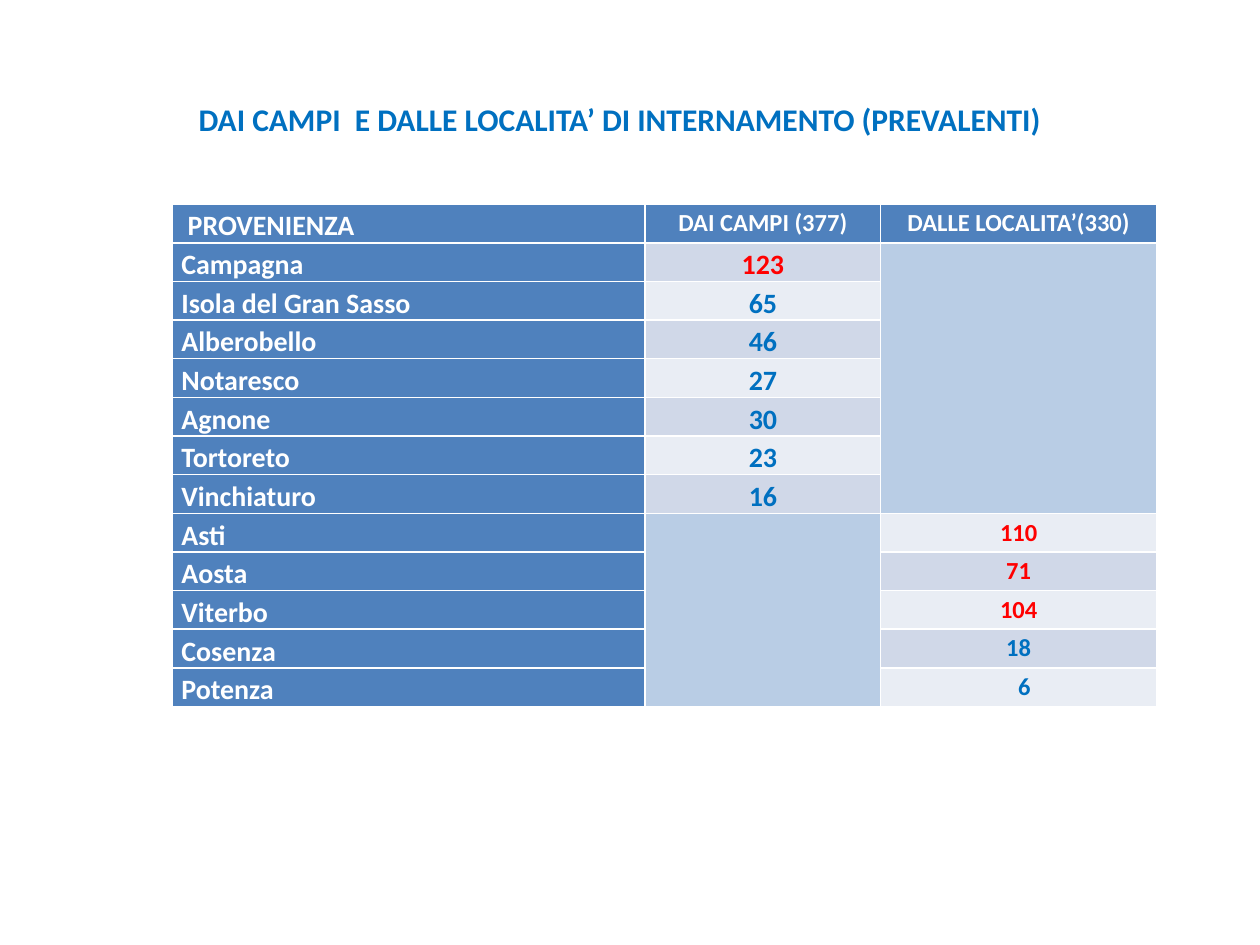
from pptx import Presentation
from pptx.dml.color import RGBColor
from pptx.enum.text import MSO_ANCHOR, MSO_AUTO_SIZE, PP_ALIGN
from pptx.util import Inches, Pt

WHITE = RGBColor(0xFF, 0xFF, 0xFF)
RED = RGBColor(0xFF, 0x00, 0x00)
BLUE = RGBColor(0x00, 0x70, 0xC0)
HEADER_FILL = RGBColor(0x4F, 0x81, 0xBD)
EMPTY_FILL = RGBColor(0xB9, 0xCD, 0xE5)
BAND_FILLS = (RGBColor(0xE9, 0xED, 0xF4), RGBColor(0xD0, 0xD8, 0xE8))

TITLE = "DAI CAMPI  E DALLE LOCALITA’ DI INTERNAMENTO (PREVALENTI)"
HEADERS = ("PROVENIENZA", "DAI CAMPI (377)", "DALLE LOCALITA’(330)")
CAMPS = (("Campagna", 123), ("Isola del Gran Sasso", 65), ("Alberobello", 46),
         ("Notaresco", 27), ("Agnone", 30), ("Tortoreto", 23), ("Vinchiaturo", 16))
TOWNS = (("Asti", 110), ("Aosta", 71), ("Viterbo", 104), ("Cosenza", 18), ("Potenza", 6))
COLUMN_WIDTHS = (3.75, 1.87, 2.19)
ROW_HEIGHT = 0.25
HIGHLIGHT_FROM = 70
CELL_MARGIN = 0.07


class SlideBuilder:
    font_name = "Calibri"

    def __init__(self, slide):
        self.slide = slide

    def add_run(self, paragraph, text, size, color):
        run = paragraph.add_run()
        run.text = text
        run.font.name = self.font_name
        run.font.size = Pt(size)
        run.font.bold = True
        run.font.color.rgb = color

    def title(self, text, left, top, width, height):
        shape = self.slide.shapes.title
        shape.left, shape.top = Inches(left), Inches(top)
        shape.width, shape.height = Inches(width), Inches(height)
        frame = shape.text_frame
        frame.word_wrap = True
        frame.auto_size = MSO_AUTO_SIZE.SHAPE_TO_FIT_TEXT
        frame.vertical_anchor = MSO_ANCHOR.TOP
        paragraph = frame.paragraphs[0]
        paragraph.alignment = PP_ALIGN.CENTER
        self.add_run(paragraph, text, 18, BLUE)

    def table(self, row_count, left, top):
        shape = self.slide.shapes.add_table(
            row_count, len(COLUMN_WIDTHS), Inches(left), Inches(top),
            Inches(sum(COLUMN_WIDTHS)), Inches(row_count * ROW_HEIGHT))
        table = shape.table
        table.first_col = True
        for column, width in zip(table.columns, COLUMN_WIDTHS):
            column.width = Inches(width)
        for row in table.rows:
            row.height = Inches(ROW_HEIGHT)
        for cell in table.iter_cells():
            cell.margin_left = cell.margin_right = Inches(CELL_MARGIN)
            cell.margin_top = cell.margin_bottom = 0
        return table

    def cell(self, cell, text, fill, color=WHITE, size=16,
             alignment=PP_ALIGN.CENTER, indent=0):
        self.fill(cell, fill)
        cell.margin_left = Inches(CELL_MARGIN + indent)
        paragraph = cell.text_frame.paragraphs[0]
        paragraph.alignment = alignment
        paragraph.line_spacing = 1.15
        self.add_run(paragraph, text, size, color)

    def fill(self, cell, color):
        cell.fill.solid()
        cell.fill.fore_color.rgb = color

    def merged_block(self, table, column, first_row, last_row):
        origin = table.cell(first_row, column)
        origin.merge(table.cell(last_row, column))
        self.fill(origin, EMPTY_FILL)


def main():
    presentation = Presentation()
    presentation.slide_width, presentation.slide_height = Inches(10), Inches(7.5)
    slide = presentation.slides.add_slide(presentation.slide_layouts[5])
    builder = SlideBuilder(slide)
    builder.title(TITLE, 1.14, 0.74, 7.56, 0.4)

    places = CAMPS + TOWNS
    table = builder.table(len(places) + 1, 1.37, 1.62)
    origin_header, *count_headers = HEADERS
    builder.cell(table.cell(0, 0), origin_header, HEADER_FILL,
                 alignment=PP_ALIGN.LEFT, indent=0.05)
    for column, header in enumerate(count_headers, start=1):
        builder.cell(table.cell(0, column), header, HEADER_FILL, size=14)

    for row, (place, count) in enumerate(places, start=1):
        column, size = (1, 16) if row <= len(CAMPS) else (2, 14)
        builder.cell(table.cell(row, 0), place, HEADER_FILL, alignment=PP_ALIGN.LEFT)
        builder.cell(table.cell(row, column), str(count), BAND_FILLS[row % 2],
                     RED if count > HIGHLIGHT_FROM else BLUE, size,
                     indent=0.09 if count < 10 else 0)

    builder.merged_block(table, 2, 1, len(CAMPS))
    builder.merged_block(table, 1, len(CAMPS) + 1, len(places))
    presentation.save("out.pptx")


if __name__ == "__main__":
    main()
